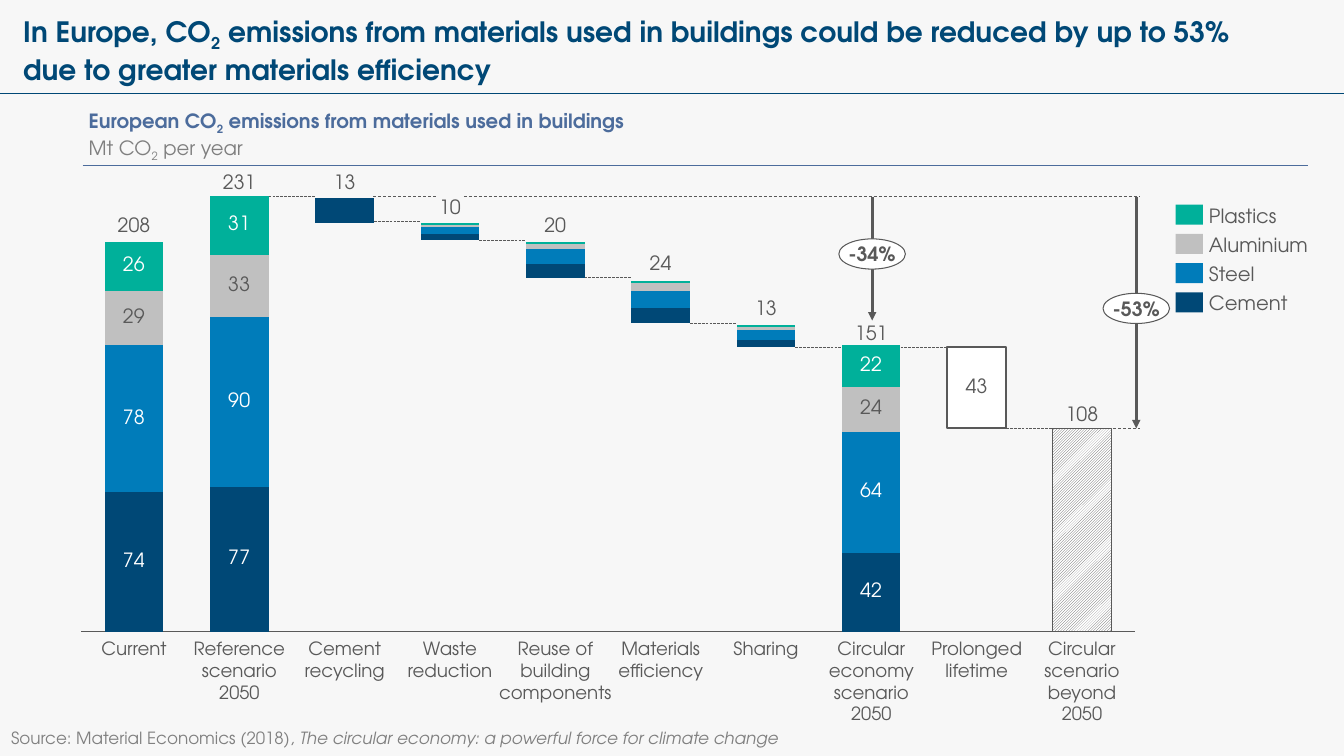
"""Build a one-slide waterfall of European building-material CO2 emissions."""
from dataclasses import dataclass

from lxml import etree
from pptx import Presentation
from pptx.chart.data import CategoryChartData
from pptx.dml.color import RGBColor
from pptx.enum.chart import XL_CHART_TYPE, XL_TICK_LABEL_POSITION, XL_TICK_MARK
from pptx.enum.dml import MSO_LINE, MSO_PATTERN
from pptx.enum.shapes import MSO_CONNECTOR, MSO_SHAPE
from pptx.enum.text import MSO_ANCHOR, PP_ALIGN
from pptx.oxml import parse_xml
from pptx.oxml.ns import nsdecls, qn
from pptx.util import Inches, Pt

STACKED = XL_CHART_TYPE.COLUMN_STACKED
NO_LABELS, NO_TICKS = XL_TICK_LABEL_POSITION.NONE, XL_TICK_MARK.NONE
DASH, LONG_DASH = MSO_LINE.DASH, MSO_LINE.LONG_DASH
HATCH = MSO_PATTERN.LIGHT_UPWARD_DIAGONAL
STRAIGHT, OVAL, RECTANGLE = MSO_CONNECTOR.STRAIGHT, MSO_SHAPE.OVAL, MSO_SHAPE.RECTANGLE
LEFT, CENTER = PP_ALIGN.LEFT, PP_ALIGN.CENTER
TOP, MIDDLE, BOTTOM = MSO_ANCHOR.TOP, MSO_ANCHOR.MIDDLE, MSO_ANCHOR.BOTTOM


@dataclass(frozen=True)
class Theme:
    font: str = "TeX Gyre Adventor"
    background: RGBColor = RGBColor.from_string("F7F7F7")
    white: RGBColor = RGBColor.from_string("FFFFFF")
    text: RGBColor = RGBColor.from_string("595959")
    unit: RGBColor = RGBColor.from_string("7F7F7F")
    source: RGBColor = RGBColor.from_string("808080")
    heading: RGBColor = RGBColor.from_string("4C6C9C")
    cement: RGBColor = RGBColor.from_string("004876")
    steel: RGBColor = RGBColor.from_string("007CBA")
    aluminium: RGBColor = RGBColor.from_string("C0C0C0")
    plastics: RGBColor = RGBColor.from_string("00B09A")
    title_size: int = 20
    label_size: int = 14
    category_size: int = 13
    source_size: int = 12
    chart_size: int = 10


THEME = Theme()
MATERIALS = [("Cement", THEME.cement), ("Steel", THEME.steel),
             ("Aluminium", THEME.aluminium), ("Plastics", THEME.plastics)]

prs = Presentation()
prs.slide_width, prs.slide_height = Inches(13.33), Inches(7.5)
slide = prs.slides.add_slide(prs.slide_layouts[6])
slide.background.fill.solid()
slide.background.fill.fore_color.rgb = THEME.background


def add_text(paragraphs, left, top, width, height, size=THEME.label_size, color=THEME.text,
             bold=False, align=LEFT, anchor=TOP, wrap=True, oval=False):
    """Add text; each paragraph is a string or a list of (text, format) runs."""
    box = (Inches(left), Inches(top), Inches(width), Inches(height))
    if oval:
        holder = slide.shapes.add_shape(OVAL, *box)
        holder.shadow.inherit = False
        holder.fill.solid()
        holder.fill.fore_color.rgb = THEME.white
        holder.line.color.rgb = THEME.text
        holder.line.width = Pt(0.75)
    else:
        holder = slide.shapes.add_textbox(*box)
    frame = holder.text_frame
    frame.word_wrap, frame.vertical_anchor = wrap, anchor
    frame.margin_left = frame.margin_right = frame.margin_top = frame.margin_bottom = 0
    for index, content in enumerate(paragraphs):
        paragraph = frame.add_paragraph() if index else frame.paragraphs[0]
        paragraph.alignment = align
        for words, style in [(content, {})] if isinstance(content, str) else content:
            run = paragraph.add_run()
            run.text = words
            run.font.name, run.font.size = THEME.font, Pt(size)
            run.font.bold = style.get("bold", bold)
            run.font.italic = style.get("italic", False)
            run.font.color.rgb = style.get("color", color)
            if style.get("subscript"):
                run.font._element.set("baseline", "-25000")


def add_line(x1, y1, x2, y2, color=THEME.text, width=0.75, dash=None, arrow=False):
    """Add a straight line, optionally dashed or with an arrowhead at its end."""
    rule = slide.shapes.add_connector(STRAIGHT, Inches(x1), Inches(y1), Inches(x2), Inches(y2))
    rule.line.color.rgb = color
    rule.line.width = Pt(width)
    if dash:
        rule.line.dash_style = dash
    if arrow:
        etree.SubElement(rule.line._get_or_add_ln(), qn("a:tailEnd"), type="triangle")
    etree.SubElement(rule._element.spPr, qn("a:effectLst"))


SUBSCRIPT = {"subscript": True}
add_line(0, 0.93, 13.33, 0.93, color=THEME.cement)
add_text([[("In Europe, CO", {}), ("2", SUBSCRIPT),
           (" emissions from materials used in buildings could be reduced by up to 53% "
            "due to greater materials efficiency", {})]],
         0.23, 0.14, 12.28, 0.67, size=THEME.title_size, color=THEME.cement, bold=True)
UNIT = {"color": THEME.unit, "bold": False}
add_text([[("European CO", {}), ("2", SUBSCRIPT),
           (" emissions from materials used in buildings", {})],
          [("Mt CO", UNIT), ("2", {**UNIT, **SUBSCRIPT}), (" per year", UNIT)]],
         0.88, 1.14, 12, 0.47, color=THEME.heading, bold=True, anchor=BOTTOM)
add_line(0.82, 1.64, 12.97, 1.64, color=THEME.heading)

CHART_LEFT, CHART_TOP, CHART_WIDTH, CHART_HEIGHT = 0.7, 1.86, 10.66, 4.5
PLOT_X, PLOT_Y, PLOT_W, PLOT_H = 0.01, 0.02, 0.98, 0.96
AXIS_MAX, GAP_PERCENT = 231, 80

BARS = [
    ("Current", 0.8, 208, 208),
    ("Reference scenario 2050", 0.93, 231, 231),
    ("Cement recycling", 0.82, 231, 13),
    ("Waste reduction", 0.86, 218, 10),
    ("Reuse of building components", 1.13, 208, 20),
    ("Materials efficiency", 0.88, 188, 24),
    ("Sharing", 0.8, 164, 13),
    ("Circular economy scenario 2050", 0.86, 151, 151),
    ("Prolonged lifetime", 0.92, 151, None),
    ("Circular scenario beyond 2050", 0.76, 108, 108),
]
LAYERS = [
    [74, 77, 217, 208, 188, 164, 151, 42, 108, 108],
    [78, 90, 13, 3, 7, 8, 4, 64, 43, None],
    [29, 33, 0, 4, 8, 9, 5, 24, 0, None],
    [26, 31, 0, 1, 3, 4, 2, 22, 0, None],
    [None, None, 0, 1, 1, 1, 1, None, 0, None],
]
SCENARIOS, PROLONGED, BEYOND = (0, 1, 7), 8, 9

emissions = CategoryChartData()
emissions.categories = [str(number + 1) for number in range(len(BARS))]
for number, values in enumerate(LAYERS, 1):
    emissions.add_series(f"Series {number}", values)
chart = slide.shapes.add_chart(STACKED, Inches(CHART_LEFT), Inches(CHART_TOP),
                               Inches(CHART_WIDTH), Inches(CHART_HEIGHT), emissions).chart
chart.has_legend = chart.has_title = False
chart.font.name, chart.font.size = THEME.font, Pt(THEME.chart_size)
chart.font.color.rgb = THEME.text
chart.value_axis.visible = chart.value_axis.has_major_gridlines = False
chart.value_axis.minimum_scale, chart.value_axis.maximum_scale = 0, AXIS_MAX
chart.category_axis.tick_label_position = NO_LABELS
chart.category_axis.major_tick_mark = chart.category_axis.minor_tick_mark = NO_TICKS
chart.category_axis.format.line.color.rgb = THEME.text
chart.category_axis.format.line.width = Pt(0.75)
plot = chart.plots[0]
plot.gap_width, plot.overlap, plot.vary_by_categories = GAP_PERCENT, 100, False

plot_area = chart._chartSpace.chart.plotArea
for preset in plot_area.findall(qn("c:layout")):
    plot_area.remove(preset)
plot_area.insert(0, parse_xml(
    f'<c:layout {nsdecls("c")}><c:manualLayout><c:layoutTarget val="inner"/>'
    '<c:xMode val="edge"/><c:yMode val="edge"/>'
    f'<c:x val="{PLOT_X}"/><c:y val="{PLOT_Y}"/><c:w val="{PLOT_W}"/><c:h val="{PLOT_H}"/>'
    '</c:manualLayout></c:layout>'))

for layer, series in enumerate(plot.series):
    if layer:
        series.format.fill.solid()
        series.format.fill.fore_color.rgb = MATERIALS[layer - 1][1]
    else:
        series.format.fill.background()
    series.data_labels.show_value = False
    labelled = {bar: MATERIALS[layer][1] for bar in SCENARIOS} if layer < len(MATERIALS) else {}
    if layer == 1:
        labelled[PROLONGED] = THEME.white
    for bar, color in labelled.items():
        point = series.points[bar]
        point.format.fill.solid()
        point.format.fill.fore_color.rgb = color
        label = point.data_label.font
        label.name, label.size = THEME.font, Pt(THEME.label_size)
        label.color.rgb = THEME.text if color in (THEME.aluminium, THEME.white) else THEME.white

hatched = plot.series[0].points[BEYOND].format
hatched.fill.patterned()
hatched.fill.pattern = HATCH
hatched.fill.fore_color.rgb, hatched.fill.back_color.rgb = THEME.text, THEME.white
for outline, weight in [(hatched.line, 0.75), (plot.series[1].points[PROLONGED].format.line, 1.5)]:
    outline.color.rgb = THEME.text
    outline.width = Pt(weight)

step = CHART_WIDTH * PLOT_W / len(BARS)
half_bar = step / (1 + GAP_PERCENT / 100) / 2
centers = [CHART_LEFT + CHART_WIDTH * PLOT_X + step * (bar + 0.5) for bar in range(len(BARS))]
scale = CHART_HEIGHT * PLOT_H / AXIS_MAX
baseline = CHART_TOP + CHART_HEIGHT * (PLOT_Y + PLOT_H)
tops = [baseline - level * scale for _, _, level, _ in BARS]

for bar, (category, width, _, total) in enumerate(BARS):
    add_text([category], centers[bar] - width / 2, 6.32, width, 0.22,
             size=THEME.category_size, align=CENTER)
    if total is not None:
        add_text([str(total)], centers[bar] - 0.25, tops[bar] - 0.26, 0.5, 0.23,
                 align=CENTER, anchor=BOTTOM, wrap=False)
    if 0 < bar < BEYOND:
        add_line(centers[bar] + half_bar, tops[bar + 1], centers[bar + 1] - half_bar,
                 tops[bar + 1], width=0.25, dash=LONG_DASH)

reference, beyond = tops[1], tops[BEYOND]
for start, end, level in [(3.7, 4.32, reference), (4.6, 11.31, reference), (11.04, 11.31, beyond)]:
    add_line(start, level, end, level, width=0.5, dash=DASH)
for change, x, end, oval_top in [("-34%", 8.65, 3.18, 2.37), ("-53%", 11.27, beyond, 2.91)]:
    add_line(x, reference, x, end, width=2, arrow=True)
    add_text([change], x - 0.33, oval_top, 0.66, 0.3, bold=True, align=CENTER,
             anchor=MIDDLE, wrap=False, oval=True)

for row, (material, color) in enumerate(reversed(MATERIALS)):
    y = 2.03 + 0.29 * row
    key = slide.shapes.add_shape(RECTANGLE, Inches(11.66), Inches(y), Inches(0.27), Inches(0.2))
    key.shadow.inherit = False
    key.fill.solid()
    key.fill.fore_color.rgb = color
    key.line.fill.background()
    add_text([material], 11.99, y - 0.01, 1.25, 0.23, anchor=MIDDLE)

add_text([[("Source: Material Economics (2018), ", {}),
           ("The circular economy: a powerful force for climate change", {"italic": True})]],
         0.11, 7.22, 12.68, 0.2, size=THEME.source_size, color=THEME.source)

prs.save("out.pptx")
